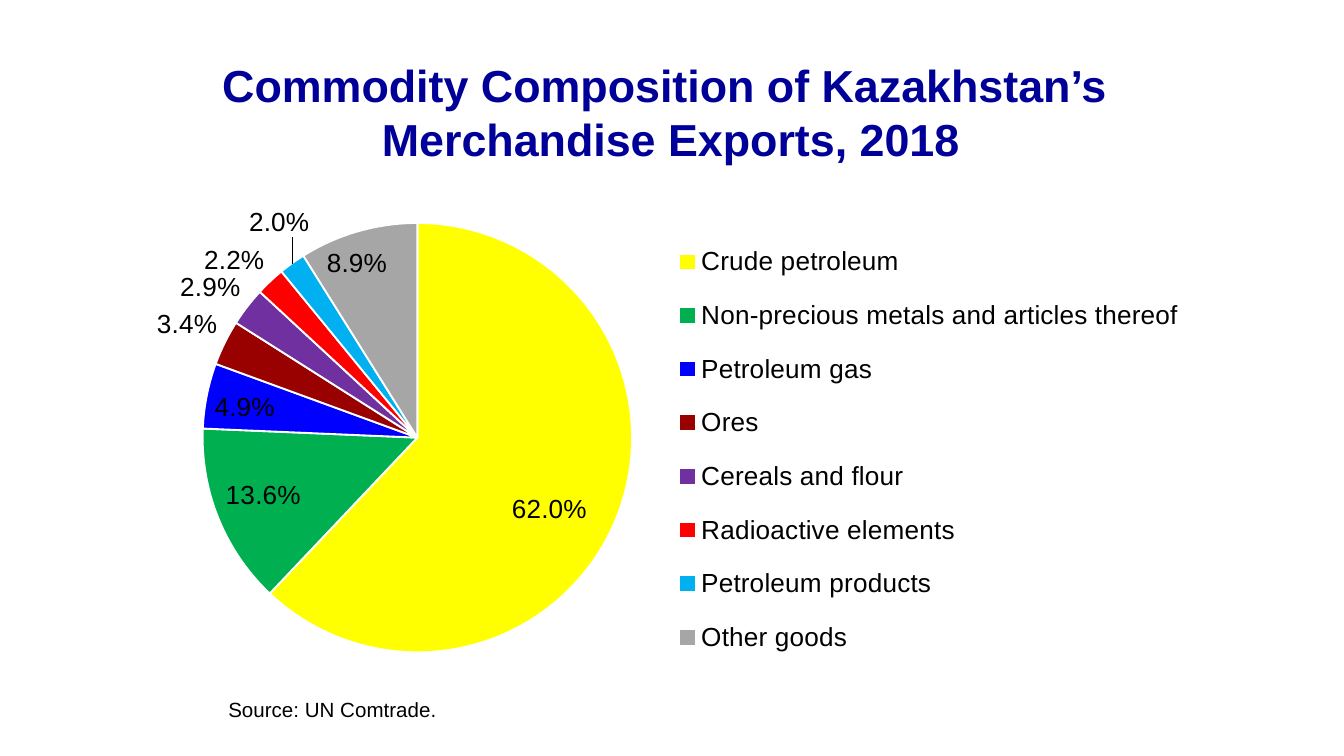
from dataclasses import dataclass

from lxml import etree
from pptx import Presentation
from pptx.chart.data import CategoryChartData
from pptx.dml.color import RGBColor
from pptx.enum.chart import XL_CHART_TYPE, XL_LABEL_POSITION, XL_LEGEND_POSITION
from pptx.enum.text import MSO_ANCHOR, PP_ALIGN
from pptx.oxml import parse_xml
from pptx.oxml.ns import nsdecls, qn
from pptx.util import Inches, Pt

PIE = XL_CHART_TYPE.PIE
LEGEND_RIGHT = XL_LEGEND_POSITION.RIGHT
INSIDE = XL_LABEL_POSITION.INSIDE_END
OUTSIDE = XL_LABEL_POSITION.OUTSIDE_END
MIDDLE = MSO_ANCHOR.MIDDLE
CENTER, LEFT = PP_ALIGN.CENTER, PP_ALIGN.LEFT


@dataclass(frozen=True)
class Theme:
    font: str = "Arial"
    title_color: str = "000099"
    text_color: str = "000000"
    slice_border: str = "FFFFFF"
    title_size: int = 24
    chart_size: int = 14
    source_size: int = 11


THEME = Theme()

# Commodity, share of exports in percent, slice colour, label position
EXPORTS = [
    ("Crude petroleum", 62.0, "FFFF00", INSIDE),
    ("Non-precious metals and articles thereof", 13.6, "00B050", INSIDE),
    ("Petroleum gas", 4.9, "0000FF", INSIDE),
    ("Ores", 3.4, "990000", OUTSIDE),
    ("Cereals and flour", 2.9, "7030A0", OUTSIDE),
    ("Radioactive elements", 2.2, "FF0000", OUTSIDE),
    ("Petroleum products", 2.0, "00B0F0", OUTSIDE),
    ("Other goods", 8.9, "A6A6A6", INSIDE),
]
# Label shifts as fractions of the chart's width and height
LABEL_SHIFTS = {
    "Crude petroleum": (-0.02, 0.02),
    "Non-precious metals and articles thereof": (0, -0.01),
    "Petroleum gas": (0, -0.01),
    "Petroleum products": (0.02, -0.04),
    "Other goods": (-0.03, 0.02),
}


def style_font(font, size, color, bold=False):
    font.name = THEME.font
    font.size = Pt(size)
    font.bold = bold
    font.color.rgb = RGBColor.from_string(color)


def fill_text(box, lines, size, color, align, bold=False):
    frame = box.text_frame
    frame.word_wrap = True
    frame.vertical_anchor = MIDDLE
    frame.text = "\n".join(lines)
    for para in frame.paragraphs:
        para.alignment = align
        style_font(para.font, size, color, bold)


def manual_layout(x, y, width=None, height=None, inner=False, absolute=True):
    """Return a chart layout element; lengths are fractions of the chart."""
    layout = etree.Element(qn("c:layout"))
    manual = etree.SubElement(layout, qn("c:manualLayout"))
    settings = [("layoutTarget", "inner")] if inner else []
    if absolute:
        settings += [("xMode", "edge"), ("yMode", "edge")]
    settings += [("x", x), ("y", y)]
    if width is not None:
        settings += [("w", width), ("h", height)]
    for name, value in settings:
        etree.SubElement(manual, qn(f"c:{name}")).set("val", str(value))
    return layout


def replace_layout(parent, layout, index):
    for old in parent.findall(qn("c:layout")):
        parent.remove(old)
    parent.insert(index, layout)


def add_title(page):
    title = page.shapes.title
    title.left, title.top = Inches(1.03), Inches(0.4)
    title.width, title.height = Inches(7.92), Inches(0.86)
    lines = ["Commodity Composition of Kazakhstan’s ", "Merchandise Exports, 2018"]
    fill_text(title, lines, THEME.title_size, THEME.title_color, CENTER, True)


def format_slices(series):
    for index, (_, _, color, position) in enumerate(EXPORTS):
        point = series.points[index]
        point.format.fill.solid()
        point.format.fill.fore_color.rgb = RGBColor.from_string(color)
        point.format.line.color.rgb = RGBColor.from_string(THEME.slice_border)
        point.format.line.width = Pt(1)
        point.data_label.position = position


def format_labels(series):
    labels = series.data_labels
    labels.show_value = True
    labels.number_format = '0.0"%"'
    labels.number_format_is_linked = False
    root = labels._element
    for label in root.findall(qn("c:dLbl")):
        label.find(qn("c:showVal")).set("val", "1")
        label.find(qn("c:showPercent")).set("val", "0")
        # Shift single labels; the layout follows the index element
        name = EXPORTS[int(label.find(qn("c:idx")).get("val"))][0]
        if name in LABEL_SHIFTS:
            replace_layout(label, manual_layout(*LABEL_SHIFTS[name], absolute=False), 1)
    for leader in root.findall(qn("c:showLeaderLines")):
        root.remove(leader)
    root.append(parse_xml(f'<c:showLeaderLines {nsdecls("c")} val="1"/>'))


def add_export_chart(page):
    data = CategoryChartData(number_format='0.0"%"')
    data.categories = [name for name, *_ in EXPORTS]
    data.add_series("Series 1", [share for _, share, *_ in EXPORTS])
    chart = page.shapes.add_chart(
        PIE, Inches(0.87), Inches(1.48), Inches(8.28), Inches(3.59), data
    ).chart
    chart.has_title = False
    style_font(chart.font, THEME.chart_size, THEME.text_color)

    # Plot area and legend
    plot = chart.plots[0]
    plot.vary_by_categories = True
    plot_area = chart._chartSpace.chart.plotArea
    replace_layout(plot_area, manual_layout(0.04, 0.05, 0.46, 0.89, inner=True), 0)
    chart.has_legend = True
    chart.legend.position = LEGEND_RIGHT
    chart.legend.include_in_layout = False
    replace_layout(chart.legend._element, manual_layout(0.5, 0.05, 0.46, 0.94), 1)

    # Slices and labels
    format_slices(plot.series[0])
    format_labels(plot.series[0])


def add_source(page):
    box = page.shapes.add_textbox(Inches(1.6), Inches(5.07), Inches(7.71), Inches(0.41))
    fill_text(box, ["Source: UN Comtrade."], THEME.source_size, THEME.text_color, LEFT)


def main():
    deck = Presentation()
    # Widescreen page, 16 to 9
    deck.slide_width = Inches(10)
    deck.slide_height = Inches(10) * 9 // 16
    page = deck.slides.add_slide(deck.slide_layouts[5])
    add_title(page)
    add_export_chart(page)
    add_source(page)
    deck.save("out.pptx")


if __name__ == "__main__":
    main()
